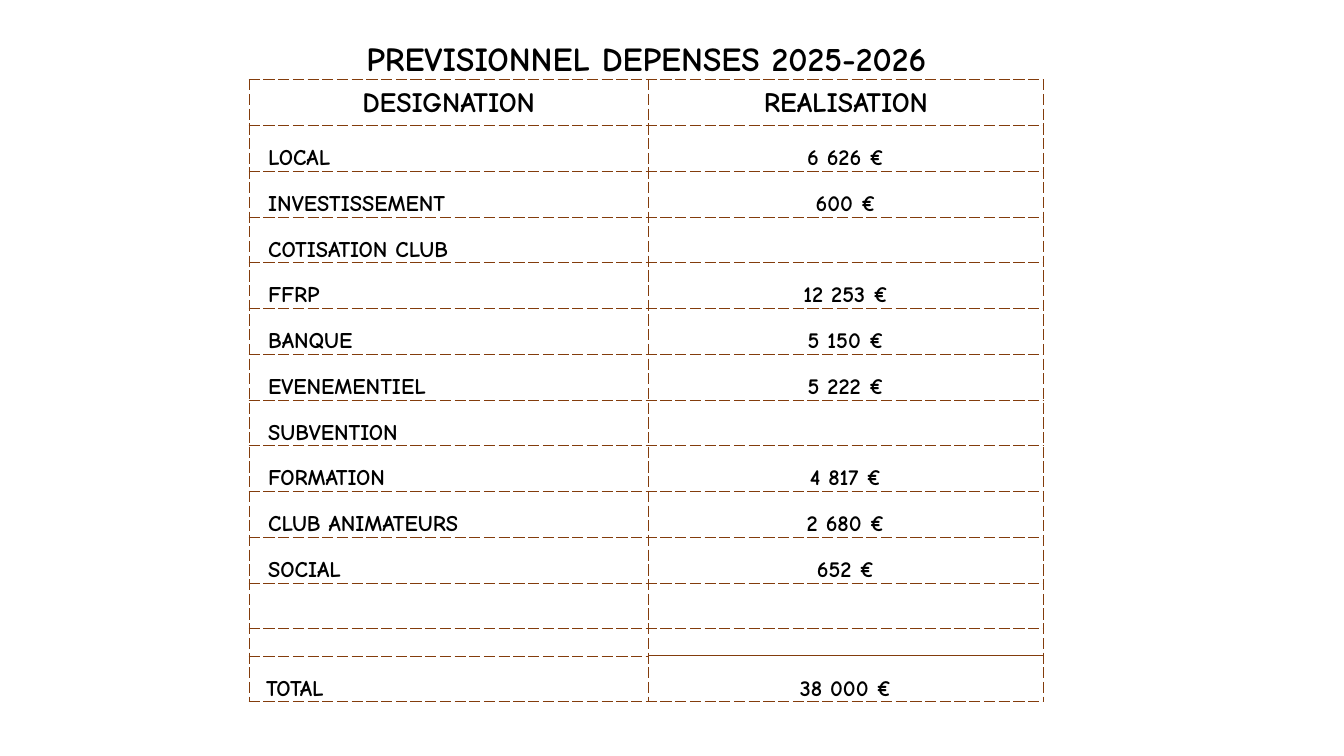
"""Build a one-page table of the planned expenses for 2025-2026."""
import pptx
import pptx.util
import pptx.dml.color
import pptx.enum.text
import pptx.oxml.ns
import lxml.etree

INCH = pptx.util.Inches
ALIGN = pptx.enum.text.PP_ALIGN
ANCHOR = pptx.enum.text.MSO_ANCHOR
FONT = "Comic Neue"
BROWN = "833C0C"


def write(cell, text, size, align, anchor, indent):
    """Put bold black text into an unfilled cell."""
    cell.fill.background()
    cell.margin_left, cell.margin_right = INCH(indent), INCH(0.01)
    cell.margin_top, cell.margin_bottom = INCH(0.01), 0
    cell.vertical_anchor = anchor
    para = cell.text_frame.paragraphs[0]
    para.alignment = align
    if text:
        para.add_run().text = text
    else:
        end = lxml.etree.SubElement(para._p, pptx.oxml.ns.qn("a:endParaRPr"), sz=str(size * 100))
        lxml.etree.SubElement(end, pptx.oxml.ns.qn("a:latin"), typeface=FONT)
    para.font.name, para.font.size, para.font.bold = FONT, pptx.util.Pt(size), True
    para.font.color.rgb = pptx.dml.color.RGBColor.from_string("000000")


def draw_border(cell, sides, solid_side=""):
    """Draw dashed brown lines on the sides, and a thicker solid one."""
    for place, side in enumerate(sides):
        solid = side == solid_side
        line = lxml.etree.Element(pptx.oxml.ns.qn("a:ln" + side), w="12700" if solid else "6350")
        fill = lxml.etree.SubElement(line, pptx.oxml.ns.qn("a:solidFill"))
        lxml.etree.SubElement(fill, pptx.oxml.ns.qn("a:srgbClr"), val=BROWN)
        lxml.etree.SubElement(line, pptx.oxml.ns.qn("a:prstDash"), val="solid" if solid else "dash")
        cell._tc.get_or_add_tcPr().insert(place, line)


expenses = [
    ("PREVISIONNEL DEPENSES 2025-2026", ""),
    ("DESIGNATION", "REALISATION"),
    ("LOCAL", "6 626 €"),
    ("INVESTISSEMENT", "600 €"),
    ("COTISATION CLUB", ""),
    ("FFRP", "12 253 €"),
    ("BANQUE", "5 150 €"),
    ("EVENEMENTIEL", "5 222 €"),
    ("SUBVENTION", ""),
    ("FORMATION", "4 817 €"),
    ("CLUB ANIMATEURS", "2 680 €"),
    ("SOCIAL", "652 €"),
    ("", ""),
    ("", ""),
    ("TOTAL", "38 000 €"),
]
total_row = len(expenses) - 1
spacer_row = total_row - 1
heights = {0: 0.54, spacer_row: 0.27}
sizes = {0: 24, 1: 20, spacer_row: 14}

deck = pptx.Presentation()
deck.slide_width, deck.slide_height = INCH(13.33), INCH(7.5)
page = deck.slides.add_slide(deck.slide_layouts[6])

frame = page.shapes.add_table(len(expenses), 2, INCH(2.47), INCH(0.25), INCH(7.88), INCH(6.72))
table = frame.table
table.first_row = table.horz_banding = False
for column, width in zip(table.columns, (3.96, 3.92)):
    column.width = INCH(width)

for row, entries in enumerate(expenses):
    table.rows[row].height = INCH(heights.get(row, 0.454))
    for column, text in enumerate(entries):
        cell = table.cell(row, column)
        label = row > 1 and column == 0
        indent = 0.01 if not label else 0.17 if row == total_row else 0.19
        write(cell, text, sizes.get(row, 16), ALIGN.LEFT if label else ALIGN.CENTER,
              ANCHOR.MIDDLE if row == 1 else ANCHOR.BOTTOM, indent)
        solid_side = {spacer_row: "B", total_row: "T"}.get(row, "") if column else ""
        draw_border(cell, "LRTB" if row else "B", solid_side)

table.cell(0, 0).merge(table.cell(0, 1))

deck.save("out.pptx")
